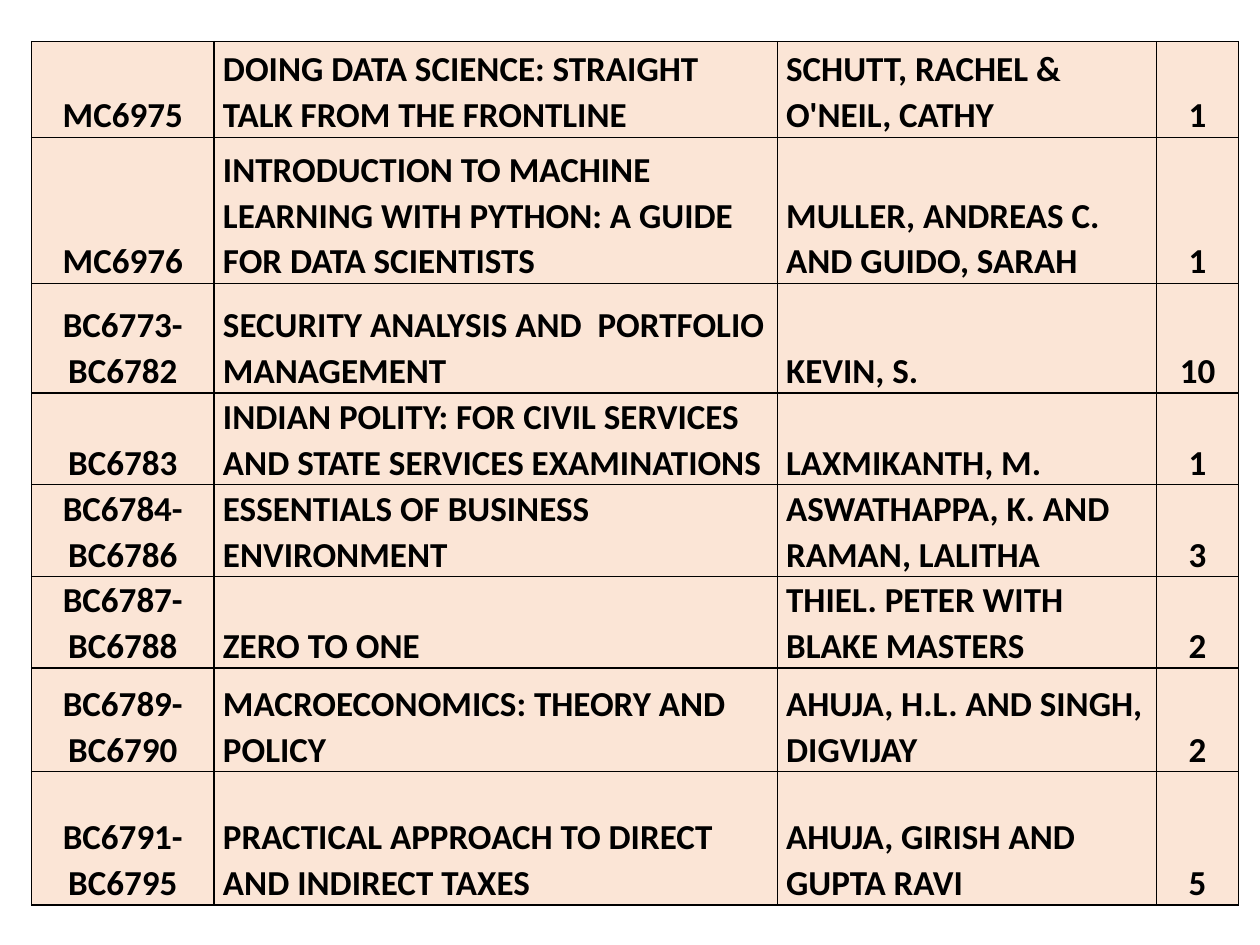
from lxml import etree
from pptx import Presentation
from pptx.dml.color import RGBColor
from pptx.enum import text
from pptx.oxml import ns
from pptx.util import Inches, Pt

PEACH = RGBColor(0xFB, 0xE5, 0xD6)
BLACK = RGBColor(0, 0, 0)
WIDTHS = [1.45, 4.47, 3.01, 0.65]
HEIGHTS = [0.76, 1.16, 0.87, 0.67, 0.67, 0.67, 0.82, 1.06]
CENTER, LEFT = text.PP_ALIGN.CENTER, text.PP_ALIGN.LEFT
ALIGNS = [CENTER, LEFT, LEFT, CENTER]
BOOKS = [
    ("MC6975", "DOING DATA SCIENCE: STRAIGHT TALK FROM THE FRONTLINE",
     "SCHUTT, RACHEL & O'NEIL, CATHY", "1"),
    ("MC6976", "INTRODUCTION TO MACHINE LEARNING WITH PYTHON: A GUIDE FOR DATA SCIENTISTS",
     "MULLER, ANDREAS C. AND GUIDO, SARAH", "1"),
    ("BC6773-BC6782", "SECURITY ANALYSIS AND  PORTFOLIO MANAGEMENT",
     "KEVIN, S.", "10"),
    ("BC6783", "INDIAN POLITY: FOR CIVIL SERVICES AND STATE SERVICES EXAMINATIONS",
     "LAXMIKANTH, M.", "1"),
    ("BC6784-BC6786", "ESSENTIALS OF BUSINESS ENVIRONMENT",
     "ASWATHAPPA, K. AND RAMAN, LALITHA", "3"),
    ("BC6787-BC6788", "ZERO TO ONE",
     "THIEL. PETER WITH BLAKE MASTERS", "2"),
    ("BC6789-BC6790", "MACROECONOMICS: THEORY AND POLICY",
     "AHUJA, H.L. AND SINGH, DIGVIJAY", "2"),
    ("BC6791-BC6795", "PRACTICAL APPROACH TO DIRECT AND INDIRECT TAXES",
     "AHUJA, GIRISH AND GUPTA RAVI", "5"),
]


def add_edges(cell):
    props = cell._tc.get_or_add_tcPr()
    for side in ("lnL", "lnR", "lnT", "lnB"):
        line = etree.SubElement(props, ns.qn(f"a:{side}"), w=str(Pt(1)))
        fill = etree.SubElement(line, ns.qn("a:solidFill"))
        etree.SubElement(fill, ns.qn("a:srgbClr"), val=str(BLACK))


def fill_cell(cell, words, align):
    add_edges(cell)
    cell.fill.solid()
    cell.fill.fore_color.rgb = PEACH
    cell.vertical_anchor = text.MSO_ANCHOR.BOTTOM
    cell.margin_left = cell.margin_right = Inches(0.07)
    cell.margin_top = cell.margin_bottom = 0
    cell.text = words
    para = cell.text_frame.paragraphs[0]
    para.alignment = align
    para.line_spacing = 1.07
    para.space_after = Pt(8)
    font = para.font
    font.name = "Calibri"
    font.size = Pt(20)
    font.bold = True
    font.color.rgb = BLACK


def add_books(slide):
    table = slide.shapes.add_table(
        len(BOOKS), len(WIDTHS), Inches(0.25), Inches(0.33),
        Inches(sum(WIDTHS)), Inches(sum(HEIGHTS))).table
    table.first_row = table.horz_banding = False
    for column, width in zip(table.columns, WIDTHS):
        column.width = Inches(width)
    for row, height, book in zip(table.rows, HEIGHTS, BOOKS):
        row.height = Inches(height)
        for cell, words, align in zip(row.cells, book, ALIGNS):
            fill_cell(cell, words, align)


def main():
    deck = Presentation()
    deck.slide_width, deck.slide_height = Inches(10), Inches(7.5)
    add_books(deck.slides.add_slide(deck.slide_layouts[6]))
    deck.save("out.pptx")


if __name__ == "__main__":
    main()
